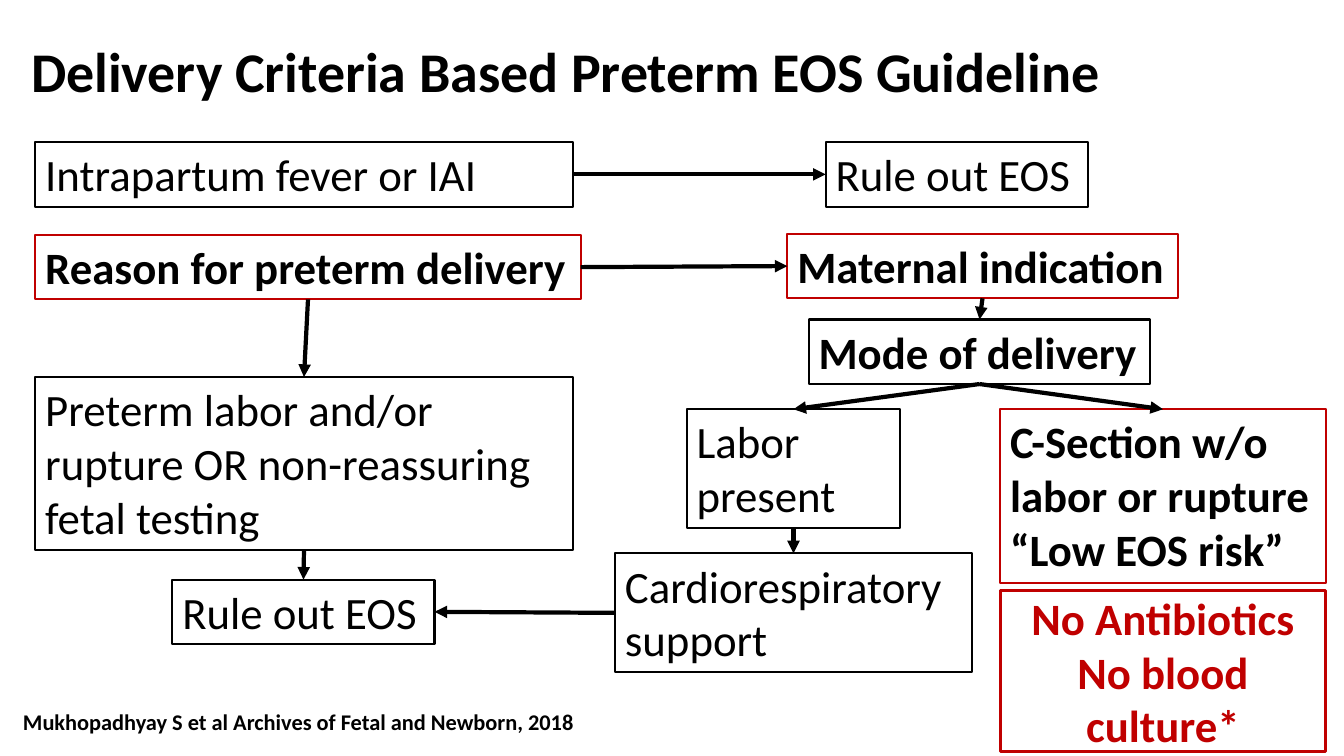
from lxml import etree
from pptx import Presentation
from pptx.dml.color import RGBColor
from pptx.enum.shapes import MSO_CONNECTOR, MSO_SHAPE
from pptx.enum.text import MSO_ANCHOR, PP_ALIGN
from pptx.oxml.ns import qn
from pptx.util import Inches, Pt

STRAIGHT = MSO_CONNECTOR.STRAIGHT
RECTANGLE = MSO_SHAPE.RECTANGLE
TOP_ANCHOR, MIDDLE_ANCHOR = MSO_ANCHOR.TOP, MSO_ANCHOR.MIDDLE
LEFT_ALIGN, CENTER_ALIGN = PP_ALIGN.LEFT, PP_ALIGN.CENTER
TOP, LEFT, BOTTOM, RIGHT = range(4)
BLACK, RED, WHITE = "000000", "C00000", "FFFFFF"

BOXES = {
    "fever": (0.35, 1.41, 5.33, 0.64, "Intrapartum fever or IAI"),
    "fever_rule_out": (8.19, 1.41, 2.6, 0.64, "Rule out EOS"),
    "reason": (0.35, 2.33, 5.41, 0.64, "Reason for preterm delivery"),
    "maternal": (7.81, 2.32, 3.87, 0.64, "Maternal indication"),
    "mode": (8.02, 3.17, 3.39, 0.64, "Mode of delivery"),
    "preterm": (0.35, 3.74, 5.33, 1.72,
                "Preterm labor and/or rupture OR non-reassuring fetal testing"),
    "labor": (6.81, 4.06, 2.12, 1.18, "Labor present"),
    "c_section": (9.92, 4.06, 3.23, 1.72,
                  "C-Section w/o labor or rupture\n“Low EOS risk”"),
    "support": (6.1, 5.49, 3.54, 1.18, "Cardiorespiratory\nsupport"),
    "preterm_rule_out": (1.71, 5.75, 2.6, 0.64, "Rule out EOS"),
}
RED_BOXES = {"reason", "maternal", "c_section"}
BOLD_BOXES = RED_BOXES | {"mode"}
SINGLE_LINE_BOXES = {"reason", "maternal", "mode", "fever_rule_out", "preterm_rule_out"}

ARROWS = [
    ("fever", RIGHT, "fever_rule_out", LEFT),
    ("reason", RIGHT, "maternal", LEFT),
    ("maternal", BOTTOM, "mode", TOP),
    ("mode", BOTTOM, "labor", TOP),
    ("mode", BOTTOM, "c_section", TOP),
    ("labor", BOTTOM, "support", TOP),
    ("support", LEFT, "preterm_rule_out", RIGHT),
    ("reason", BOTTOM, "preterm", TOP),
    ("preterm", BOTTOM, "preterm_rule_out", TOP),
]


def color(hex_string):
    """Return the colour for a hex string."""
    return RGBColor.from_string(hex_string)


def write_text(shape, text, size=32, bold=False, text_color=BLACK,
               alignment=LEFT_ALIGN, anchor=TOP_ANCHOR, wrap=True):
    """Fill a shape with text in one uniform style."""
    frame = shape.text_frame
    frame.text = text
    frame.word_wrap = wrap
    frame.vertical_anchor = anchor
    for paragraph in frame.paragraphs:
        paragraph.alignment = alignment
        for run in paragraph.runs:
            run.font.name = "Calibri"
            run.font.size = Pt(size)
            run.font.bold = bold
            run.font.color.rgb = color(text_color)


def add_box(slide, left, top, width, height, line_color, line_width=1.5, fill=WHITE):
    """Add an outlined rectangle, unfilled when fill is None."""
    shape = slide.shapes.add_shape(
        RECTANGLE, Inches(left), Inches(top), Inches(width), Inches(height))
    shape.shadow.inherit = False
    if fill:
        shape.fill.solid()
        shape.fill.fore_color.rgb = color(fill)
    else:
        shape.fill.background()
    shape.line.color.rgb = color(line_color)
    shape.line.width = Pt(line_width)
    return shape


def add_label(slide, left, top, width, height, text, **style):
    """Add a bold text box and return it."""
    label = slide.shapes.add_textbox(
        Inches(left), Inches(top), Inches(width), Inches(height))
    write_text(label, text, bold=True, **style)
    return label


def add_arrow(slide, start, start_side, end, end_side):
    """Join two boxes with an arrow."""
    connector = slide.shapes.add_connector(STRAIGHT, 0, 0, 0, 0)
    connector.begin_connect(start, start_side)
    connector.end_connect(end, end_side)
    connector.line.color.rgb = color(BLACK)
    connector.line.width = Pt(3)
    etree.SubElement(connector.line._get_or_add_ln(), qn("a:tailEnd"), type="triangle")
    etree.SubElement(connector._element.spPr, qn("a:effectLst"))


def main():
    """Build the guideline flowchart slide."""
    presentation = Presentation()
    presentation.slide_width = Inches(13.33)
    presentation.slide_height = Inches(7.5)
    slide = presentation.slides.add_slide(presentation.slide_layouts[6])

    title = add_label(slide, 0.21, 0.25, 12.94, 0.97,
                      "Delivery Criteria Based Preterm EOS Guideline",
                      size=40, anchor=MIDDLE_ANCHOR)
    title.text_frame.paragraphs[0].line_spacing = 0.9

    boxes = {}
    for name, (left, top, width, height, text) in BOXES.items():
        line_color = RED if name in RED_BOXES else BLACK
        boxes[name] = add_box(slide, left, top, width, height, line_color)
        write_text(boxes[name], text, bold=name in BOLD_BOXES,
                   wrap=name not in SINGLE_LINE_BOXES)
    for start, start_side, end, end_side in ARROWS:
        add_arrow(slide, boxes[start], start_side, boxes[end], end_side)

    add_label(slide, 0.13, 6.98, 5.86, 0.37,
              "Mukhopadhyay S et al Archives of Fetal and Newborn, 2018",
              size=16, wrap=False)
    outcome = add_box(slide, 9.92, 5.86, 3.23, 1.6, RED, line_width=2.25, fill=None)
    write_text(outcome, "No Antibiotics\nNo blood culture*", bold=True, text_color=RED,
               alignment=CENTER_ALIGN, anchor=MIDDLE_ANCHOR)
    presentation.save("out.pptx")


if __name__ == "__main__":
    main()
